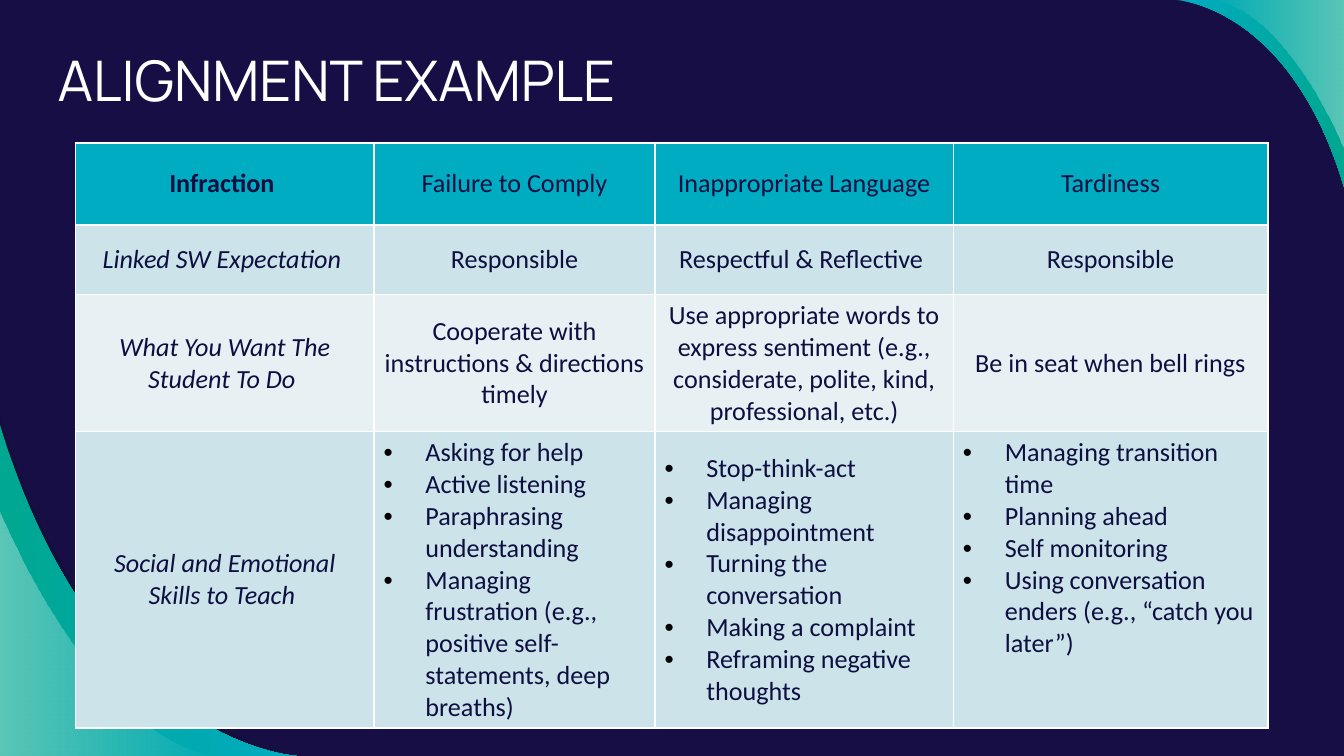
from lxml import etree
from pptx import Presentation
from pptx.dml.color import RGBColor
from pptx.enum import text
from pptx.oxml import ns
from pptx.util import Cm, Pt

WIDTH, HEIGHT = 25.4, 14.29
NAVY, INK, WHITE = "160E44", "0D0F41", "FFFFFF"
TEAL, GREEN, PALE, PALER = "00ACC2", "00A791", "CCE3E9", "E7F1F4"
ROW_FILLS = [TEAL, PALE, PALER, PALE]
COLUMN_WIDTHS = [5.64, 5.31, 5.64, 5.94]
ROW_HEIGHTS = [1.55, 1.32, 2.59, 5.6]

# A list in a cell is a bulleted list
ALIGNMENT = [
    ["Infraction ", "Failure to Comply", "Inappropriate Language", "Tardiness"],
    ["Linked SW Expectation ", "Responsible", "Respectful & Reflective ", "Responsible"],
    ["What You Want The Student To Do ",
     "Cooperate with instructions & directions timely",
     "Use appropriate words to express sentiment (e.g., considerate, polite, kind, "
     "professional, etc.)",
     "Be in seat when bell rings"],
    ["Social and Emotional Skills to Teach ",
     ["Asking for help", "Active listening", "Paraphrasing understanding",
      "Managing frustration (e.g., positive self-statements, deep breaths)"],
     ["Stop-think-act", "Managing disappointment", "Turning the conversation",
      "Making a complaint", "Reframing negative thoughts"],
     ["Managing transition time", "Planning ahead", "Self monitoring",
      "Using conversation enders (e.g., “catch you later”)"]],
]


def color(value):
    return RGBColor.from_string(value)


def add_child(parent, tag, **attributes):
    return etree.SubElement(parent, ns.qn(tag), attributes)


def style_font(paragraph, name, size, ink, bold=False, italic=False):
    font = paragraph.font
    font.name, font.size = name, Pt(size)
    font.bold, font.italic = bold, italic
    font.color.rgb = color(ink)


def set_opacity(fill_element, percents):
    for rgb, percent in zip(fill_element.iter(ns.qn("a:srgbClr")), percents):
        if percent < 100:
            add_child(rgb, "a:alpha", val=str(percent * 1000))


def bend_first_side(swoosh, curve):
    """Turn the first straight side into a cubic curve."""
    side = next(swoosh.element.iter(ns.qn("a:lnTo")))
    side.tag = ns.qn("a:cubicBezTo")
    side.clear()
    for x, y in curve[1:]:
        add_child(side, "a:pt", x=str(Cm(x) - swoosh.left), y=str(Cm(y) - swoosh.top))


def add_corner(slide, corner, curve, colors, opacities):
    """Fill the area between a slide corner and a curve."""
    start, end, tip = [(Cm(x), Cm(y)) for x, y in (curve[0], curve[-1], corner)]
    builder = slide.shapes.build_freeform(*start)
    builder.add_line_segments([end, tip], close=True)
    swoosh = builder.convert_to_shape()
    bend_first_side(swoosh, curve)
    swoosh.shadow.inherit = False
    swoosh.line.fill.background()
    if len(colors) == 1:
        swoosh.fill.solid()
        swoosh.fill.fore_color.rgb = color(colors[0])
    else:
        swoosh.fill.gradient()
        swoosh.fill.gradient_angle = 0
        for stop, value in zip(swoosh.fill.gradient_stops, colors):
            stop.color.rgb = color(value)
    set_opacity(swoosh.element.spPr, opacities)


def add_title(slide, wording):
    box = slide.shapes.add_textbox(Cm(0.84), Cm(0.61), Cm(23.14), Cm(2.11))
    frame = box.text_frame
    frame.word_wrap = True
    frame.margin_left = frame.margin_right = Cm(0.25)
    frame.margin_top = frame.margin_bottom = Cm(0.25)
    frame.text = wording
    style_font(frame.paragraphs[0], "Manrope", 30, WHITE)


def add_bullet(paragraph):
    properties = paragraph._p.get_or_add_pPr()
    properties.set("marL", str(Cm(0.79)))
    properties.set("indent", str(-Cm(0.79)))
    add_child(add_child(properties, "a:buClr"), "a:srgbClr", val="000000")
    add_child(properties, "a:buFont", typeface="Arial")
    add_child(properties, "a:buChar", char="•")


def add_borders(cell):
    properties = cell._tc.get_or_add_tcPr()
    for side in ("a:lnL", "a:lnR", "a:lnT", "a:lnB"):
        line = add_child(properties, side, w=str(Pt(1)))
        add_child(add_child(line, "a:solidFill"), "a:srgbClr", val=WHITE)


def fill_cell(cell, content, background, bold, italic):
    bulleted = isinstance(content, list)
    cell.text = "\n".join(content) if bulleted else content
    cell.vertical_anchor = text.MSO_ANCHOR.MIDDLE
    cell.margin_left = cell.margin_right = Cm(0.18)
    cell.margin_top = cell.margin_bottom = Cm(0.1)
    add_borders(cell)
    cell.fill.solid()
    cell.fill.fore_color.rgb = color(background)
    for paragraph in cell.text_frame.paragraphs:
        if bulleted:
            add_bullet(paragraph)
        else:
            paragraph.alignment = text.PP_ALIGN.CENTER
        style_font(paragraph, "Calibri", 14, INK, bold, italic)


def add_alignment_table(slide):
    table = slide.shapes.add_table(
        len(ALIGNMENT), len(COLUMN_WIDTHS), Cm(1.43), Cm(2.7),
        Cm(sum(COLUMN_WIDTHS)), Cm(sum(ROW_HEIGHTS))).table
    for column, width in zip(table.columns, COLUMN_WIDTHS):
        column.width = Cm(width)
    for r, contents in enumerate(ALIGNMENT):
        table.rows[r].height = Cm(ROW_HEIGHTS[r])
        for c, content in enumerate(contents):
            fill_cell(table.cell(r, c), content, ROW_FILLS[r],
                      bold=r == c == 0, italic=c == 0 and r > 0)
    # The tardiness skills start at the top of their cell
    table.cell(3, 3).vertical_anchor = text.MSO_ANCHOR.TOP


def main():
    deck = Presentation()
    deck.slide_width, deck.slide_height = Cm(WIDTH), Cm(HEIGHT)
    slide = deck.slides.add_slide(deck.slide_layouts[6])
    slide.background.fill.solid()
    slide.background.fill.fore_color.rgb = color(NAVY)

    # Bottom left corner: shadow, band, highlight
    bottom_left = (0, HEIGHT)
    add_corner(slide, bottom_left,
               [(0, 7.87), (1.85, 14.07), (5.77, HEIGHT), (5.77, HEIGHT)], ["12102F"], [54])
    add_corner(slide, bottom_left,
               [(0, 8.03), (1.83, 14.1), (5.61, HEIGHT), (5.61, HEIGHT)],
               [GREEN, TEAL], [100, 100])
    add_corner(slide, bottom_left,
               [(0, 9.65), (0, 9.65), (1.75, 14), (4.11, HEIGHT)], [WHITE, WHITE], [36, 0])

    # Top right corner: band, highlight
    top_right = (WIDTH, 0)
    add_corner(slide, top_right,
               [(22.23, 0), (22.23, 0), (24.38, 0.1), (WIDTH, 3.53)],
               [TEAL, GREEN], [100, 100])
    add_corner(slide, top_right,
               [(22.89, 0), (24.33, 0.18), (WIDTH, 2.84), (WIDTH, 2.84)],
               [WHITE, WHITE], [0, 36])

    # Title and table
    add_title(slide, "ALIGNMENT EXAMPLE")
    add_alignment_table(slide)
    deck.save("out.pptx")


if __name__ == "__main__":
    main()
